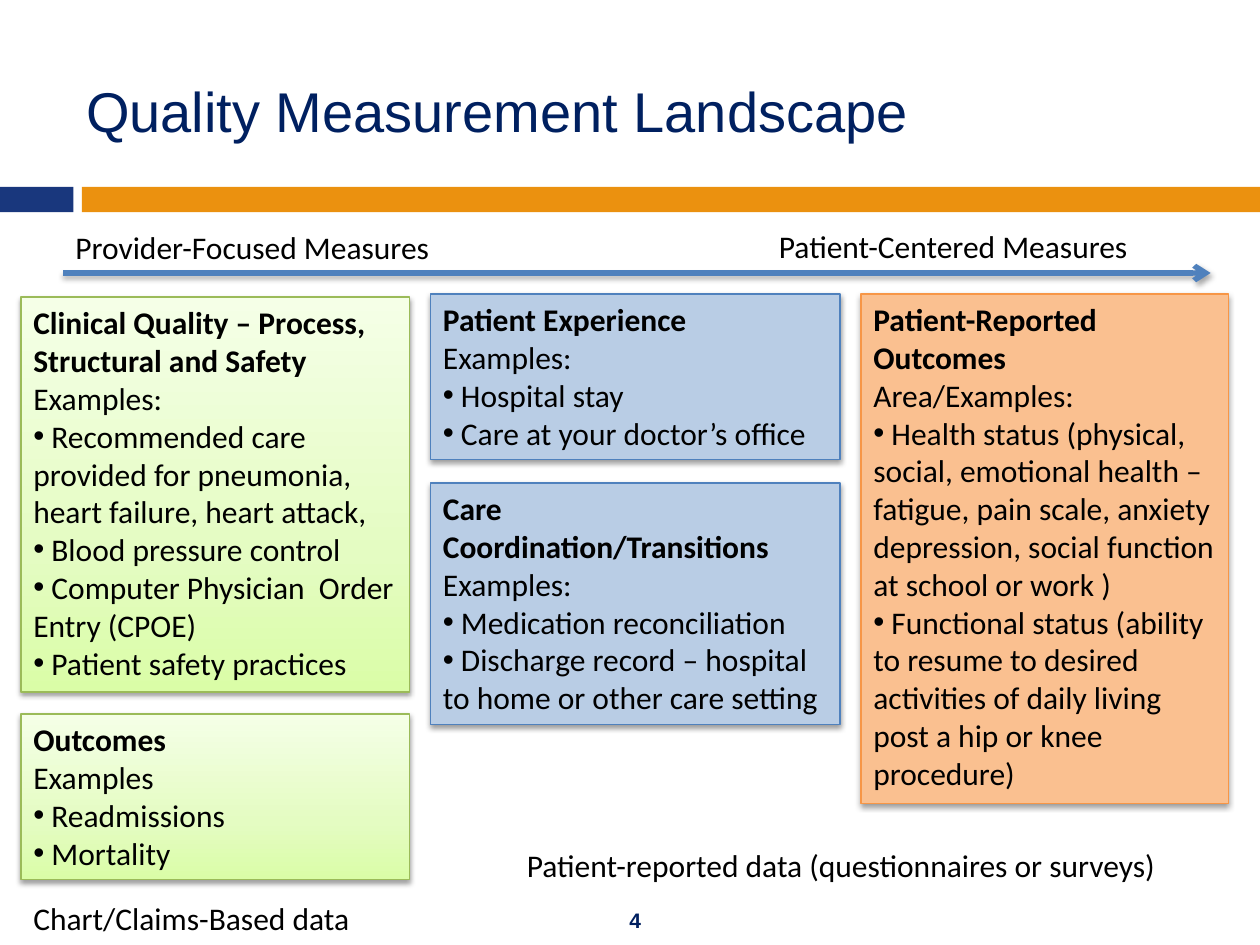
from copy import deepcopy
from lxml import etree
from pptx import Presentation, util as u
from pptx.dml.color import RGBColor
from pptx.enum import shapes, text
from pptx.oxml.ns import qn

PX = 7620
NAVY = RGBColor(0x00, 0x20, 0x60)
DARK = RGBColor(0x19, 0x37, 0x7D)
GOLD = RGBColor(0xEB, 0x91, 0x0F)
WHITE = RGBColor(0xFF, 0xFF, 0xFF)
BLACK = RGBColor(0x00, 0x00, 0x00)
BLUE = RGBColor(0x4F, 0x81, 0xBD)
SKY = RGBColor(0xB9, 0xCD, 0xE5)
GREEN = RGBColor(0x9B, 0xBB, 0x59)
LIMES = [RGBColor(0xDA, 0xFD, 0xA7), RGBColor(0xE4, 0xFC, 0xC2), RGBColor(0xF5, 0xFF, 0xE7)]
CORAL = RGBColor(0xF7, 0x96, 0x46)
PEACH = RGBColor(0xFA, 0xC0, 0x90)


def write(shape, lines, size=18, face="Calibri", color=BLACK, bold=False, align=text.PP_ALIGN.LEFT):
    frame = shape.text_frame
    frame.word_wrap = True
    frame.text = "\n".join(lines)
    for para in frame.paragraphs:
        para.alignment = align
        for run in para.runs:
            run.font.size = u.Pt(size)
            run.font.name = face
            run.font.color.rgb = color
            run.font.bold = bold
    return frame


def shade(props, alpha, blur, dist):
    effects = props.find(qn("a:effectLst"))
    if effects is None:
        effects = etree.SubElement(props, qn("a:effectLst"))
    drop = etree.SubElement(effects, qn("a:outerShdw"), blurRad=str(blur), dist=str(dist),
                            dir="5400000", rotWithShape="0")
    tone = etree.SubElement(drop, qn("a:srgbClr"), val="000000")
    etree.SubElement(tone, qn("a:alpha"), val=str(alpha * 1000))


deck = Presentation()
deck.slide_width, deck.slide_height = 1200 * PX, 900 * PX
slide = deck.slides.add_slide(deck.slide_layouts[5])
items = slide.shapes

title = items.title
title.left, title.top, title.width, title.height = [n * PX for n in (70, 50, 1080, 110)]
frame = write(title, ["Quality Measurement Landscape"], 32, "Arial", NAVY)
frame.vertical_anchor = text.MSO_ANCHOR.MIDDLE

for spot, color in [
    ((0, 178, 70, 24), DARK),
    ((78, 178, 1122, 24), GOLD),
    ((950, 750, 250, 150), WHITE),
    ((20, 850, 420, 50), WHITE),
]:
    bar = items.add_shape(shapes.MSO_SHAPE.RECTANGLE, *[n * PX for n in spot])
    bar.shadow.inherit = False
    bar.fill.solid()
    bar.fill.fore_color.rgb = color
    bar.line.fill.background()
frame = write(bar, ["Chart/Claims-Based data"])
frame.vertical_anchor = text.MSO_ANCHOR.TOP

cards = [
    ((20, 283, 370, 376), None, GREEN,
     ["Clinical Quality – Process, Structural and Safety", "Examples:",
      " Recommended care provided for pneumonia, heart failure, heart attack,",
      " Blood pressure control",
      " Computer Physician  Order Entry (CPOE)",
      " Patient safety practices"]),
    ((20, 680, 370, 158), None, GREEN,
     ["Outcomes", "Examples", " Readmissions", " Mortality"]),
    ((410, 280, 390, 158), SKY, BLUE,
     ["Patient Experience", "Examples:", " Hospital stay", " Care at your doctor’s office"]),
    ((410, 460, 390, 230), SKY, BLUE,
     ["Care Coordination/Transitions", "Examples:", " Medication reconciliation",
      " Discharge record – hospital to home or other care setting"]),
    ((820, 280, 350, 485), PEACH, CORAL,
     ["Patient-Reported Outcomes", "Area/Examples:",
      " Health status (physical, social, emotional health – fatigue, pain scale, "
      "anxiety depression, social function at school or work )",
      " Functional status (ability to resume to desired activities of daily living "
      "post a hip or knee procedure)"]),
]
for spot, color, edge, lines in cards:
    card = items.add_shape(shapes.MSO_SHAPE.RECTANGLE, *[n * PX for n in spot])
    if color:
        card.fill.solid()
        card.fill.fore_color.rgb = color
    else:
        card.fill.gradient()
        card.fill.gradient_angle = 90
        first = card.fill._xPr.find(".//" + qn("a:gs"))
        first.addnext(deepcopy(first))
        for stop, lime, place in zip(card.fill.gradient_stops, LIMES, (0, 0.35, 1)):
            stop.color.rgb = lime
            stop.position = place
    card.line.color.rgb = edge
    card.line.width = u.Pt(0.75)
    card.shadow.inherit = False
    shade(card._element.spPr, 38, 40000, 20000)
    frame = write(card, lines)
    frame.vertical_anchor = text.MSO_ANCHOR.TOP
    frame.paragraphs[0].runs[0].font.bold = True
    for para in frame.paragraphs[2:]:
        props = para._p.get_or_add_pPr()
        etree.SubElement(props, qn("a:buFont"), typeface="Arial")
        etree.SubElement(props, qn("a:buChar"), char="•")

for spot, label in [
    ((60, 211, 383, 48), "Provider-Focused Measures"),
    ((730, 210, 383, 48), "Patient-Centered Measures"),
    ((490, 800, 660, 50), "Patient-reported data (questionnaires or surveys)"),
]:
    write(items.add_textbox(*[n * PX for n in spot]), [label])

arrow = items.add_connector(shapes.MSO_CONNECTOR.STRAIGHT, 60 * PX, 260 * PX, 1153 * PX, 260 * PX)
arrow.line.color.rgb = BLUE
arrow.line.width = u.Pt(3)
etree.SubElement(arrow.line._get_or_add_ln(), qn("a:tailEnd"), type="arrow")
shade(arrow._element.spPr, 35, 40000, 23000)

page = items.add_textbox(570 * PX, 860 * PX, 70 * PX, 32 * PX)
frame = write(page, ["4"], 12, "Arial", NAVY, True, text.PP_ALIGN.CENTER)
frame.vertical_anchor = text.MSO_ANCHOR.MIDDLE

deck.save("out.pptx")
